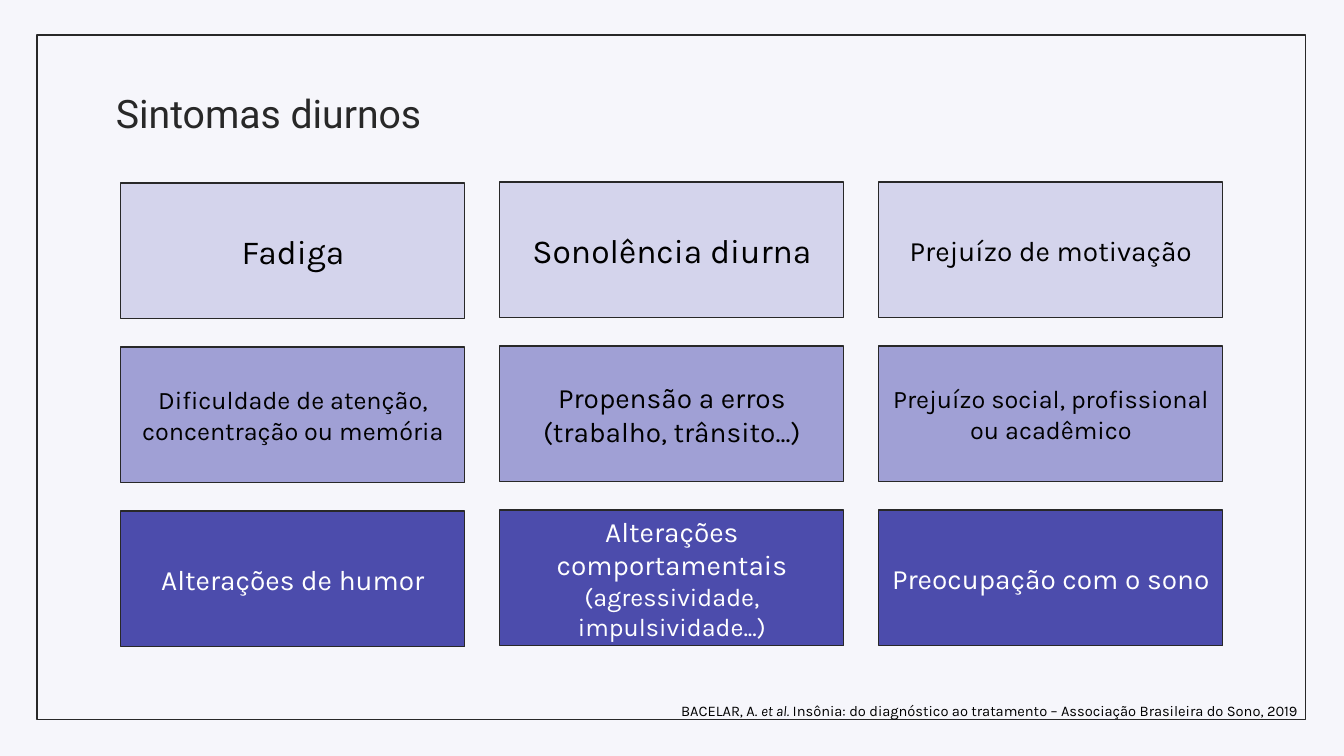
"""Build the slide on daytime symptoms of insomnia."""
from pptx import Presentation
from pptx.dml.color import RGBColor
from pptx.enum.shapes import MSO_SHAPE
from pptx.enum.text import MSO_ANCHOR, PP_ALIGN
from pptx.util import Emu, Pt

RECTANGLE = MSO_SHAPE.RECTANGLE
TOP, MIDDLE = MSO_ANCHOR.TOP, MSO_ANCHOR.MIDDLE
LEFT, CENTER, RIGHT = PP_ALIGN.LEFT, PP_ALIGN.CENTER, PP_ALIGN.RIGHT

TITLE = "Sintomas diurnos"
SYMPTOM_ROWS = [
    ("light", "black", [
        [("Fadiga", 24)],
        [("Sonolência diurna", 24)],
        [("Prejuízo de motivação", 20)],
    ]),
    ("medium", "black", [
        [("Dificuldade de atenção, concentração ou memória", 18)],
        [("Propensão a erros (trabalho, trânsito...)", 20)],
        [("Prejuízo social, profissional ou acadêmico", 18)],
    ]),
    ("dark", "white", [
        [("Alterações de humor", 20)],
        [("Alterações comportamentais ", 20), ("(agressividade, impulsividade...)", 18)],
        [("Preocupação com o sono", 20)],
    ]),
]
CITATION = [
    ("BACELAR, A. ", False),
    ("et al.", True),
    (" Insônia: do diagnóstico ao tratamento – Associação Brasileira do Sono, 2019", False),
]
COLORS = {
    "background": "F6F6FB", "ink": "282828", "black": "000000", "white": "FFFFFF",
    "light": "D4D4EC", "medium": "A0A0D5", "dark": "4C4CAC",
}
SLIDE_SIZE = (1344, 756)
FRAME = (37, 35, 1269, 685)
TITLE_BOX = (106, 79, 1132, 85)
CITATION_BOX = (380, 697, 928, 29)
COLUMN_LEFT, COLUMN_STEP = 121, 379
COLUMN_TOPS = (183, 182, 182)
ROW_STEP = 164
CARD_WIDTH, CARD_HEIGHT = 344, 136
INSET = 10


def px(length):
    return Emu(round(length * 914400 / 100.8))


def color(name):
    return RGBColor.from_string(COLORS[name])


def add_rectangle(slide, box, fill=None):
    rectangle = slide.shapes.add_shape(RECTANGLE, *map(px, box))
    rectangle.shadow.inherit = False
    rectangle.line.color.rgb = color("ink")
    rectangle.line.width = Pt(0.75)
    if fill:
        rectangle.fill.solid()
        rectangle.fill.fore_color.rgb = color(fill)
    else:
        rectangle.fill.background()
    return rectangle


def style_text(frame, align, anchor, face, ink, size=None):
    frame.word_wrap = True
    frame.vertical_anchor = anchor
    paragraph = frame.paragraphs[0]
    paragraph.alignment = align
    paragraph.font.name = face
    paragraph.font.color.rgb = color(ink)
    if size:
        paragraph.font.size = Pt(size)
    return paragraph


def add_title(slide):
    frame = slide.shapes.add_textbox(*map(px, TITLE_BOX)).text_frame
    frame.margin_top = frame.margin_bottom = px(INSET)
    style_text(frame, LEFT, TOP, "Roboto", "ink", 28).add_run().text = TITLE


def add_symptoms(slide):
    for row, (fill, ink, symptoms) in enumerate(SYMPTOM_ROWS):
        for column, symptom in enumerate(symptoms):
            left = COLUMN_LEFT + column * COLUMN_STEP
            top = COLUMN_TOPS[column] + row * ROW_STEP
            card = add_rectangle(slide, (left, top, CARD_WIDTH, CARD_HEIGHT), fill)
            paragraph = style_text(card.text_frame, CENTER, MIDDLE, "Karla", ink)
            for words, size in symptom:
                run = paragraph.add_run()
                run.text = words
                run.font.size = Pt(size)


def add_citation(slide):
    frame = slide.shapes.add_textbox(*map(px, CITATION_BOX)).text_frame
    paragraph = style_text(frame, RIGHT, TOP, "Karla", "black", 10.5)
    for words, italic in CITATION:
        run = paragraph.add_run()
        run.text = words
        run.font.italic = italic


def main():
    deck = Presentation()
    deck.slide_width, deck.slide_height = map(px, SLIDE_SIZE)
    slide = deck.slides.add_slide(deck.slide_layouts[6])
    slide.background.fill.solid()
    slide.background.fill.fore_color.rgb = color("background")
    add_rectangle(slide, FRAME)
    add_title(slide)
    add_symptoms(slide)
    add_citation(slide)
    deck.save("out.pptx")


if __name__ == "__main__":
    main()
